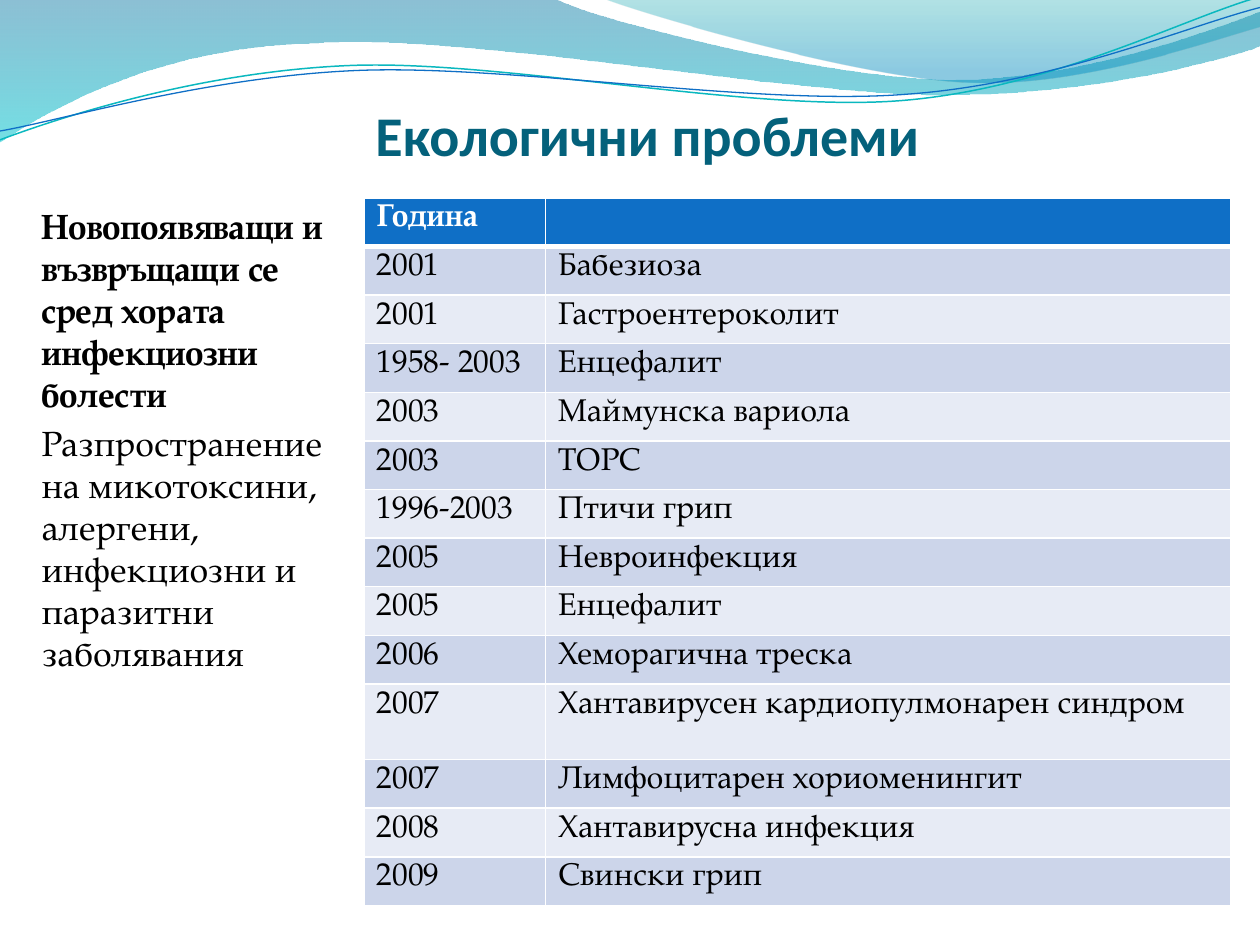
from math import cos, radians, sin

from pptx import Presentation
from pptx.dml.color import RGBColor
from pptx.enum.text import MSO_ANCHOR, PP_ALIGN
from pptx.oxml import parse_xml
from pptx.oxml.ns import nsdecls, qn
from pptx.util import Inches, Pt

HEX = {
    "title": "04617B", "text": "000000", "white": "FFFFFF", "head": "0F6FC6",
    "odd": "CCD5EA", "even": "E7EBF5", "teal": "0AB8BF", "blue": "0F6FC6",
    "deep": "0074A1", "aqua": "00C6CF", "sea": "00A1A9", "sky": "008BBF",
}
SERIF = "TeX Gyre Pagella"
TILT = -2.7

# Each curve is a start point, then straight (2 numbers) or cubic (6) parts.
WAVES = [
    ([(0, 0), (4.4, -0.01), (4.76, 0.17, 6.64, 0.63, 7.58, 0.63),
      (8.53, 0.63, 9.58, 0.26, 10, 0.09), (10.01, 0.36),
      (9.83, 0.44, 8.7, 0.76, 7.46, 0.75), (6.22, 0.75, 3.82, 0.28, 2.57, 0.34),
      (1.29, 0.36, 0.46, 0.83, -0.01, 1.13)],
     [(0, "deep", 45), (1, "aqua", 55)]),
    ([(4.79, -0.01), (5.09, 0.11, 6.82, 0.62, 7.69, 0.65),
      (8.56, 0.69, 9.61, 0.32, 10, 0.21), (10, 0)],
     [(0, "sea", 30), (0.8, "sky", 45)]),
]
LINES = [
    ([(0, 1.11), (0.48, 0.93, 1.58, 0.57, 2.77, 0.52),
      (3.95, 0.47, 5.93, 0.89, 7.13, 0.8), (8.33, 0.71, 9.38, 0.15, 9.98, -0.02)],
     (4.99, 0.58), "teal", 0.85),
    ([(0, 1.04), (0.47, 0.96, 1.64, 0.61, 2.83, 0.56),
      (4.03, 0.51, 5.97, 0.84, 7.17, 0.75), (8.36, 0.67, 9.41, 0.21, 10, 0.06)],
     (5, 0.59), "blue", 0.75),
]
ROWS = [
    ("Година", ""),
    ("2001", "Бабезиоза"),
    ("2001", "Гастроентероколит"),
    ("1958- 2003", "Енцефалит"),
    ("2003", "Маймунска вариола"),
    ("2003", "ТОРС"),
    ("1996-2003", "Птичи грип"),
    ("2005", "Невроинфекция"),
    ("2005", "Енцефалит"),
    ("2006", "Хеморагична треска"),
    ("2007", "Хантавирусен кардиопулмонарен синдром"),
    ("2007", "Лимфоцитарен хориоменингит"),
    ("2008", "Хантавирусна инфекция"),
    ("2009", "Свински грип"),
]
TALL = 10


def color(name):
    return RGBColor.from_string(HEX[name])


def write(par, text, size=18, font=SERIF, ink="text", bold=False,
          align=PP_ALIGN.LEFT, before=0):
    par.text = text
    par.alignment = align
    par.space_before = Pt(before)
    for run in par.runs:
        run.font.size, run.font.name, run.font.bold = Pt(size), font, bold
        run.font.color.rgb = color(ink)


def frame(slide, box, insets, anchor=MSO_ANCHOR.TOP):
    """Add a wrapped text box; insets run left, top, right, bottom."""
    text = slide.shapes.add_textbox(*map(Inches, box)).text_frame
    text.word_wrap = True
    text.vertical_anchor = anchor
    (text.margin_left, text.margin_top,
     text.margin_right, text.margin_bottom) = map(Inches, insets)
    return text


def turn(part, mid, angle):
    """Turn the points of a part about mid, clockwise in degrees."""
    c, s = cos(radians(angle)), sin(radians(angle))
    out = []
    for x, y in zip(part[::2], part[1::2]):
        x, y = x - mid[0], y - mid[1]
        out += [mid[0] + x * c - y * s, mid[1] + x * s + y * c]
    return out


def curve(slide, origin, parts, close):
    """Lay the points as a polygon, then join each three into a cubic."""
    points = [(Inches(x), Inches(y)) for part in parts
              for x, y in zip(part[::2], part[1::2])]
    maker = slide.shapes.build_freeform(*points[0])
    maker.add_line_segments(points[1:], close=close)
    shape = maker.convert_to_shape(*map(Inches, origin))
    shape.shadow.inherit = False
    nodes = iter(list(shape._element.iter(qn("a:lnTo"))))
    for part in parts[1:]:
        node = next(nodes)
        if len(part) == 6:
            node.tag = qn("a:cubicBezTo")
            for _ in range(2):
                extra = next(nodes)
                node.append(extra[0])
                extra.getparent().remove(extra)
    return shape


def add_waves(slide, origin):
    for parts, stops in WAVES:
        shape = curve(slide, origin, parts, True)
        shape.line.fill.background()
        shape.fill.gradient()
        shape.fill.gradient_angle = 270
        for stop, (place, name, _) in zip(shape.fill.gradient_stops, stops):
            stop.position = place
            stop.color.rgb = color(name)
        inks = shape._element.spPr.iter(qn("a:srgbClr"))
        for ink, (_, _, alpha) in zip(inks, stops):
            ink.append(parse_xml(f'<a:alpha {nsdecls("a")} val="{alpha * 1000}"/>'))
    for parts, mid, name, width in LINES:
        level = [turn(part, mid, -TILT) for part in parts]
        shape = curve(slide, origin, level, False)
        shape.rotation = TILT
        shape.fill.background()
        shape.line.color.rgb = color(name)
        shape.line.width = Pt(width)


def add_title(slide, box):
    text = frame(slide, box, (0, 0.05, 0, 0), MSO_ANCHOR.BOTTOM)
    write(text.paragraphs[0], "Екологични проблеми", size=32, font="Calibri",
          ink="title", bold=True, align=PP_ALIGN.CENTER)


def add_body(slide, box):
    text = frame(slide, box, (0.02, 0.05, 0.02, 0.05))
    write(text.paragraphs[0], "Новопоявяващи и възвръщащи се сред хората\v"
          "инфекциозни болести", size=20, bold=True)
    write(text.add_paragraph(), "Разпространение на микотоксини, алергени, "
          "инфекциозни и паразитни заболявания", size=20, before=4)


def edge(cell, low):
    """Draw white cell borders, with the given width below."""
    props = cell._tc.get_or_add_tcPr()
    for side, width in zip("LRTB", (1, 1, 1, low)):
        props.append(parse_xml(
            f'<a:ln{side} {nsdecls("a")} w="{Pt(width)}"><a:solidFill>'
            f'<a:srgbClr val="{HEX["white"]}"/></a:solidFill></a:ln{side}>'))


def add_years(slide, box, first=1.44, tall=0.6):
    width, height = box[2:]
    table = slide.shapes.add_table(len(ROWS), 2, *map(Inches, box)).table
    for col, size in zip(table.columns, (first, width - first)):
        col.width = Inches(size)
    short = (height - tall) / (len(ROWS) - 1)
    for r, row in enumerate(ROWS):
        table.rows[r].height = Inches(tall if r == TALL else short)
        head = r == 0
        for c, text in enumerate(row):
            cell = table.cell(r, c)
            cell.margin_top, cell.margin_bottom = Inches(0.05), Inches(0.02)
            edge(cell, 3 if head else 1)
            cell.fill.solid()
            cell.fill.fore_color.rgb = color("head" if head else "odd" if r % 2 else "even")
            write(cell.text_frame.paragraphs[0], text, bold=head,
                  ink="white" if head else "text")


def main():
    deck = Presentation()
    deck.slide_width, deck.slide_height = Inches(10), Inches(7.5)
    slide = deck.slides.add_slide(deck.slide_layouts[6])
    add_waves(slide, (0, 0))
    add_title(slide, (0.75, 0.56, 8.78, 0.77))
    add_body(slide, (0.31, 1.57, 2.5, 5.23))
    add_years(slide, (2.89, 1.57, 6.88, 5.62))
    deck.save("out.pptx")


if __name__ == "__main__":
    main()
